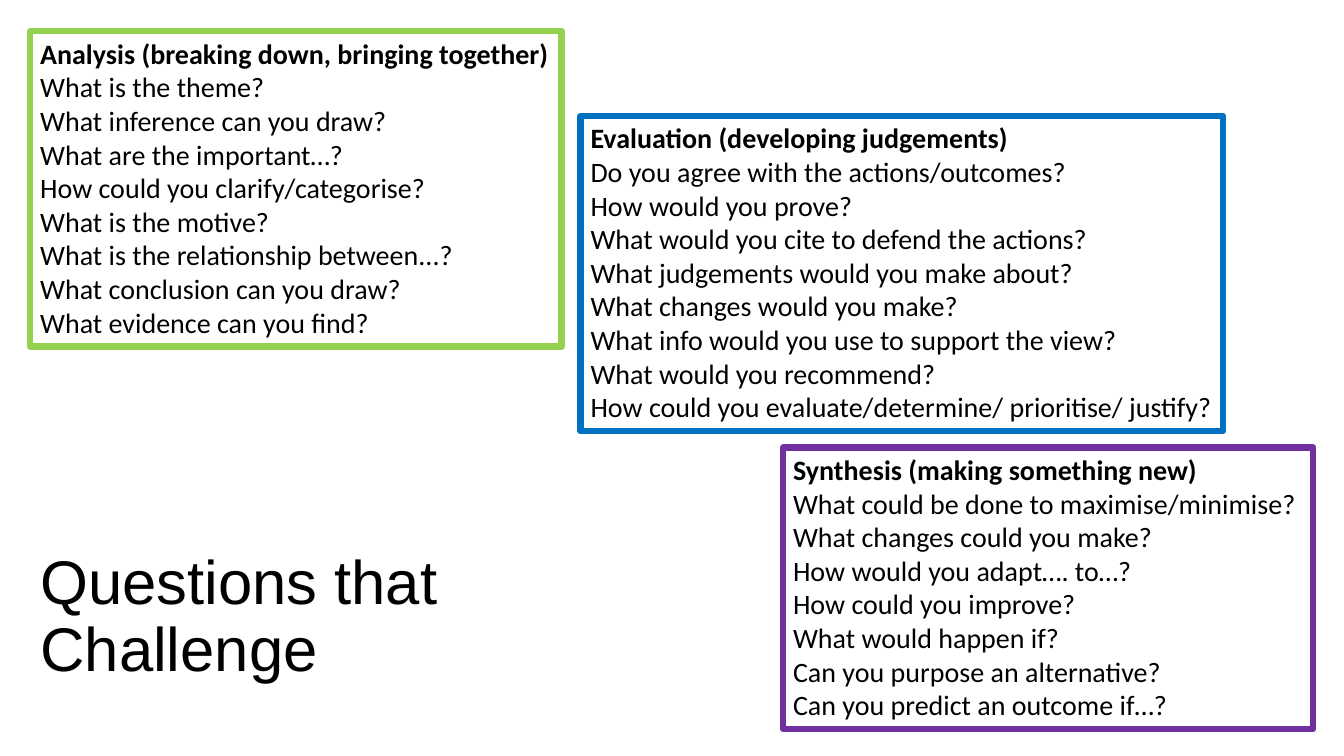
"""Build a slide of challenging questions in three framed boxes."""
from pptx import Presentation
from pptx.dml.color import RGBColor
from pptx.enum.text import MSO_ANCHOR, MSO_AUTO_SIZE, PP_ALIGN
from pptx.util import Pt

COLORS = {"text": "000000", "green": "92D050", "purple": "7030A0", "blue": "0070C0"}
TITLE = "Questions that Challenge"
TITLE_PLACE = (21.6, 377.3, 336.2, 128.2)
TOPICS = [
    {
        "heading": "Analysis (breaking down, bringing together)",
        "questions": [
            "What is the theme?",
            "What inference can you draw?",
            "What are the important…?",
            "How could you clarify/categorise?",
            "What is the motive?",
            "What is the relationship between...?",
            "What conclusion can you draw?",
            "What evidence can you find?",
        ],
        "color": "green",
        "place": (21.6, 22.3, 379.5),
    },
    {
        "heading": "Synthesis (making something new)",
        "questions": [
            "What could be done to maximise/minimise?",
            "What changes could you make?",
            "How would you adapt…. to…?",
            "How could you improve?",
            "What would happen if?",
            "Can you purpose an alternative?",
            "Can you predict an outcome if…?",
        ],
        "color": "purple",
        "place": (559.4, 319.7, 378.7),
    },
    {
        "heading": "Evaluation (developing judgements)",
        "questions": [
            "Do you agree with the actions/outcomes?",
            "How would you prove?",
            "What would you cite to defend the actions?",
            "What judgements would you make about?",
            "What changes would you make?",
            "What info would you use to support the view?",
            "What would you recommend?",
            "How could you evaluate/determine/ prioritise/ justify?",
        ],
        "color": "blue",
        "place": (414.7, 82.8, 459),
    },
]
LINE_HEIGHT = 24
BOX_PADDING = 9.3


def rgb(name):
    """Return the named colour."""
    return RGBColor.from_string(COLORS[name])


def add_run(para, text, font_name, size, bold=False):
    """Add one formatted run to a paragraph."""
    span = para.add_run()
    span.text = text
    font = span.font
    font.name, font.size, font.bold = font_name, Pt(size), bold
    font.color.rgb = rgb("text")


def add_title(page):
    """Place and fill the title."""
    title = page.shapes.title
    title.left, title.top, title.width, title.height = map(Pt, TITLE_PLACE)
    frame = title.text_frame
    frame.word_wrap = True
    frame.auto_size = MSO_AUTO_SIZE.NONE
    frame.vertical_anchor = MSO_ANCHOR.MIDDLE
    para = frame.paragraphs[0]
    para.alignment = PP_ALIGN.LEFT
    para.line_spacing = 0.9
    add_run(para, TITLE, "Arial", 44)


def add_topic(page, topic):
    """Add a framed box with a bold heading and its questions."""
    lines = [topic["heading"], *topic["questions"]]
    left, top, width = topic["place"]
    height = len(lines) * LINE_HEIGHT + BOX_PADDING
    box = page.shapes.add_textbox(*map(Pt, (left, top, width, height)))
    box.line.color.rgb = rgb(topic["color"])
    box.line.width = Pt(4.5)
    frame = box.text_frame
    frame.word_wrap = True
    frame.auto_size = MSO_AUTO_SIZE.SHAPE_TO_FIT_TEXT
    for index, line in enumerate(lines):
        para = frame.add_paragraph() if index else frame.paragraphs[0]
        add_run(para, line, "Calibri", 20, bold=index == 0)


def main():
    """Create and save the deck."""
    deck = Presentation()
    deck.slide_width, deck.slide_height = Pt(960), Pt(540)
    page = deck.slides.add_slide(deck.slide_layouts[5])
    add_title(page)
    for topic in TOPICS:
        add_topic(page, topic)
    deck.save("out.pptx")


if __name__ == "__main__":
    main()
